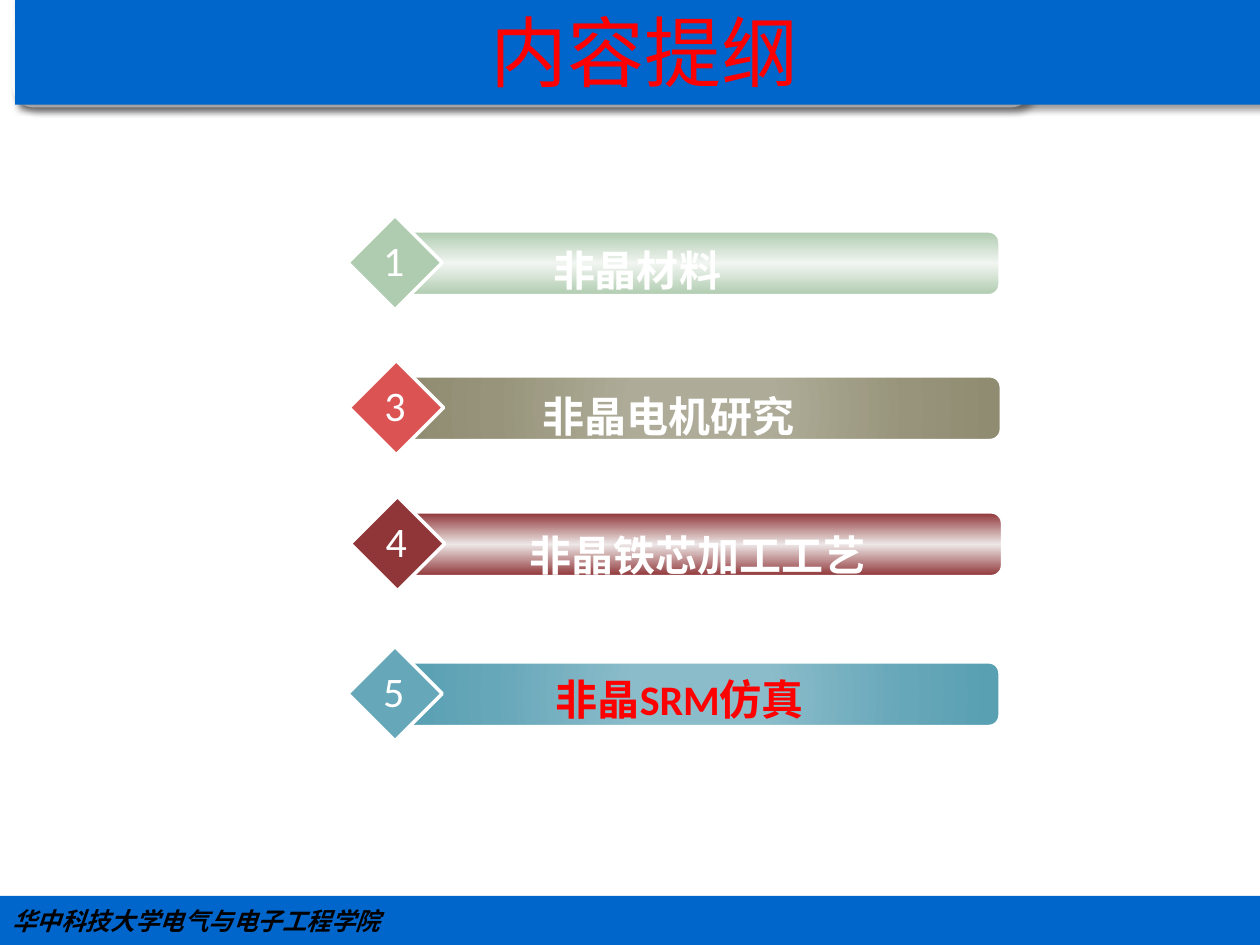
import pptx
import pptx.util
import pptx.dml.color
import pptx.enum.shapes
import pptx.enum.text
import pptx.oxml.ns
import lxml.etree

Inches, Pt = pptx.util.Inches, pptx.util.Pt
RGB = pptx.dml.color.RGBColor.from_string
KIND = pptx.enum.shapes.MSO_SHAPE
ALIGN = pptx.enum.text.PP_ALIGN
ANCHOR = pptx.enum.text.MSO_ANCHOR
FIT = pptx.enum.text.MSO_AUTO_SIZE
qn = pptx.oxml.ns.qn

HUES = {"blue": "0066CC", "red": "FF0000", "white": "FFFFFF", "black": "000000",
        "green": "B0CCB0", "coral": "DB5353", "wine": "903638", "teal": "66A7B9"}
CJK, LATIN = "Noto Sans CJK SC", "Calibri"
TITLE = "内容提纲"
FOOT = "华中科技大学电气与电子工程学院"
BACK = [(0, "8488C4"), (53, "D4DEFF"), (83, "D4DEFF"), (100, "96AB94")]
ITEMS = [
    dict(num="1", text="非晶材料", left=2.76, top=1.71, hue="green", ink="white",
         box=(3.03, 1.89), pad=0.3, round=False,
         stops=[(0, "B0CCB0"), (50, "F1F5F1"), (100, "B0CCB0")]),
    dict(num="3", text="非晶电机研究", left=2.77, top=2.86, hue="coral", ink="white",
         box=(3.43, 3.05), pad=0, round=True,
         stops=[(0, "AEAC98"), (23, "AEAC98"), (69, "98947C"), (97, "8F8C71")]),
    dict(num="4", text="非晶铁芯加工工艺", left=2.78, top=3.94, hue="wine", ink="white",
         box=(3.43, 4.15), pad=0.46, round=False,
         stops=[(0, "903638"), (50, "EDE7E7"), (100, "903638")]),
    dict(num="5", text="非晶SRM仿真", left=2.76, top=5.13, hue="teal", ink="red",
         box=(3.03, 5.3), pad=0.98, round=True,
         stops=[(0, "8BBCCA"), (23, "8BBCCA"), (69, "66A7B9"), (97, "59A0B3")]),
]


def node(root, tag, **attrs):
    return lxml.etree.SubElement(root, qn(tag), {k: str(v) for k, v in attrs.items()})


def tint(root, hue):
    return node(root, "a:srgbClr", val=hue)


def blend(shape, stops, round=False):
    shape.fill.solid()
    old = shape.element.spPr.find(qn("a:solidFill"))
    grad = lxml.etree.Element(qn("a:gradFill"), rotWithShape="1")
    row = node(grad, "a:gsLst")
    for spot, hue in stops:
        tint(node(row, "a:gs", pos=spot * 1000), hue)
    if round:
        way = node(grad, "a:path", path="circle")
        node(way, "a:fillToRect", l=50000, t=50000, r=50000, b=50000)
    else:
        node(grad, "a:lin", ang=5400000, scaled=1)
    old.getparent().replace(old, grad)


def shade(shape):
    shape.shadow.inherit = False
    root = shape.element.spPr.find(qn("a:effectLst"))
    cast = node(root, "a:outerShdw", blurRad=Pt(4), dist=Pt(3), dir=2700000,
                algn="tl", rotWithShape=0)
    node(tint(cast, HUES["black"]), "a:alpha", val=40000)


def draw(kind, place, hue=None, edge=None):
    shape = slide.shapes.add_shape(kind, *map(Inches, place))
    shape.shadow.inherit = False
    if hue:
        shape.fill.solid()
        shape.fill.fore_color.rgb = RGB(HUES[hue])
    if edge:
        shape.line.color.rgb = RGB(HUES["white"])
        shape.line.width = Pt(edge)
    else:
        shape.line.fill.background()
    return shape


def write(shape, text, ink, align, face, **form):
    para = shape.text_frame.paragraphs[0]
    para.alignment = align
    run = para.add_run()
    run.text = text
    run.font.color.rgb = RGB(HUES[ink])
    for key, val in {"name": face, **form}.items():
        setattr(run.font, key, val)
    node(run.font._element, "a:ea", typeface=CJK)


def label(place, text, ink, wrap, pad=0, **form):
    box = slide.shapes.add_textbox(*map(Inches, place))
    frame = {"word_wrap": wrap, "auto_size": FIT.SHAPE_TO_FIT_TEXT,
             "margin_left": Inches(0.1 + pad)}
    for key, val in frame.items():
        setattr(box.text_frame, key, val)
    write(box, text, ink, ALIGN.CENTER, LATIN, size=Pt(24), **form)


deck = pptx.Presentation()
deck.slide_width, deck.slide_height = Inches(10), Inches(7.5)
slide = deck.slides.add_slide(deck.slide_layouts[5])

plate = draw(KIND.ROUNDED_RECTANGLE, (0.16, 0.16, 7.97, 0.63), edge=9)
blend(plate, BACK)
shade(plate)

title = slide.shapes.title
for key, val in zip(("left", "top", "width", "height"), (0.12, -0.03, 10, 0.86)):
    setattr(title, key, Inches(val))
title.fill.solid()
title.fill.fore_color.rgb = RGB(HUES["blue"])
title.text_frame.vertical_anchor = ANCHOR.MIDDLE
write(title, TITLE, "red", ALIGN.CENTER, CJK, size=Pt(44))
shade(title)
title.element.addprevious(plate.element)

foot = draw(KIND.RECTANGLE, (0, 7.11, 10, 0.39), "blue")
foot.text_frame.vertical_anchor = ANCHOR.MIDDLE
write(foot, FOOT, "black", ALIGN.LEFT, CJK, size=Pt(14), bold=True, italic=True)

for item in ITEMS:
    left, top = item["left"], item["top"]
    bar = draw(KIND.ROUNDED_RECTANGLE, (left + 0.42, top + 0.13, 4.75, 0.5), edge=1)
    bar.adjustments[0] = 0.167
    blend(bar, item["stops"], item["round"])
    draw(KIND.DIAMOND, (left, top, 0.75, 0.75), item["hue"], 2)
    label((*item["box"], 3.75, 0.5), item["text"], item["ink"], True, item["pad"], bold=True)
    label((left + 0.17, top + 0.1, 0.39, 0.5), item["num"], "white", False)

deck.save("out.pptx")
